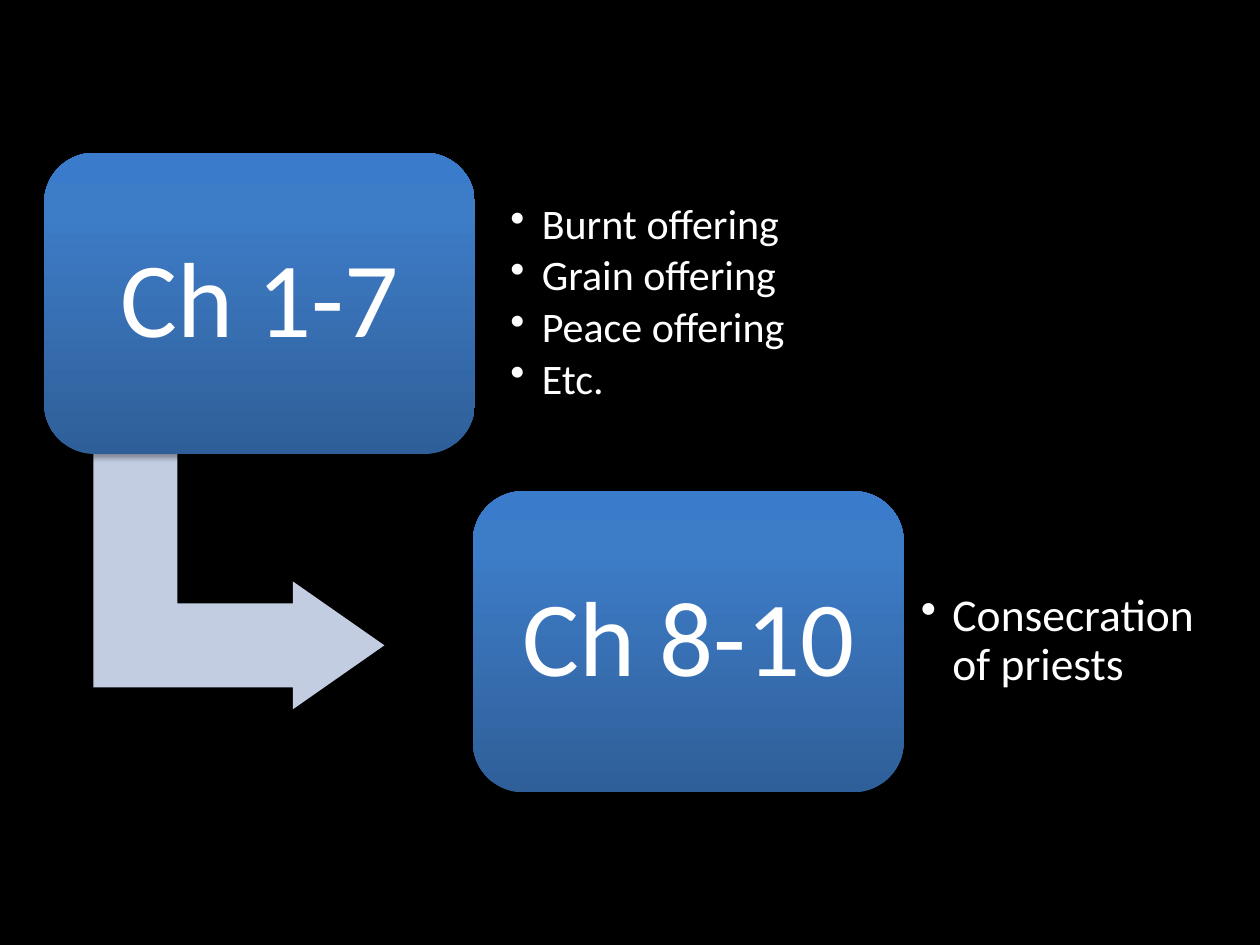
from copy import deepcopy
from lxml import etree
from pptx import Presentation
from pptx.dml.color import RGBColor
from pptx.enum.shapes import MSO_SHAPE
from pptx.enum.text import MSO_ANCHOR, PP_ALIGN
from pptx.oxml.ns import qn
from pptx.util import Pt

ROUND = MSO_SHAPE.ROUNDED_RECTANGLE
BENT = MSO_SHAPE.BENT_UP_ARROW
MIDDLE = MSO_ANCHOR.MIDDLE
CENTER, LEFT = PP_ALIGN.CENTER, PP_ALIGN.LEFT
BLACK = RGBColor(0x00, 0x00, 0x00)
WHITE = RGBColor(0xFF, 0xFF, 0xFF)
PALE = RGBColor(0xC2, 0xCD, 0xE1)
STOPS = [
    (0, RGBColor(0x2F, 0x5F, 0x99)),
    (0.8, RGBColor(0x3D, 0x7C, 0xC7)),
    (1, RGBColor(0x3A, 0x7C, 0xCB)),
]
FONT = "Calibri"

STEPS = [
    {"title": "Ch 1-7", "size": 24, "left": 282.2, "width": 350, "inset": 9.4,
     "items": ["Burnt offering", "Grain offering", "Peace offering", "Etc."]},
    {"title": "Ch 8-10", "size": 26, "left": 516.2, "width": 179.3, "inset": 10.1,
     "items": ["Consecration of priests"]},
]
BOX_W, BOX_H = 246.2, 172.1
LEFT_0, TOP_0 = 25.2, 87.3
STEP_X, STEP_Y = 245, 193.4
LIST_H = 139
LIST_DY = 16.4
ARROW = (63.4, 249.1, 146.2, 166.3)
BENDS = (0.328, 0.25, 0.358)


def shade(shape):
    shape.shadow.inherit = False
    effects = shape._element.spPr.find(qn("a:effectLst"))
    outer = etree.SubElement(effects, qn("a:outerShdw"), blurRad=str(Pt(3.1)),
                             dist=str(Pt(1.8)), dir="5400000", rotWithShape="0")
    color = etree.SubElement(outer, qn("a:srgbClr"), val=str(BLACK))
    etree.SubElement(color, qn("a:alpha"), val="35000")


def blend(shape):
    shape.fill.gradient()
    shape.fill.gradient_angle = 90
    stops = shape._element.spPr.find(qn("a:gradFill")).find(qn("a:gsLst"))
    stops.append(deepcopy(stops[-1]))
    for stop, (pos, color) in zip(shape.fill.gradient_stops, STOPS):
        stop.position = pos
        stop.color.rgb = color


def write(shape, lines, size, inset, align, after):
    frame = shape.text_frame
    frame.word_wrap = True
    frame.vertical_anchor = MIDDLE
    frame.margin_left = frame.margin_right = Pt(inset)
    frame.margin_top = frame.margin_bottom = Pt(inset)
    frame.text = "\n".join(lines)
    for para in frame.paragraphs:
        para.alignment = align
        para.line_spacing = 0.9
        para.space_after = Pt(size * after)
        for run in para.runs:
            run.font.name = FONT
            run.font.size = Pt(size)
            run.font.color.rgb = WHITE
    return frame.paragraphs


def bullet(para):
    props = para._p.get_or_add_pPr()
    props.set("marL", str(Pt(18)))
    props.set("indent", str(Pt(-18)))
    etree.SubElement(props, qn("a:buChar"), char="•")


def main():
    deck = Presentation()
    deck.slide_width, deck.slide_height = Pt(720), Pt(540)
    slide = deck.slides.add_slide(deck.slide_layouts[6])
    slide.background.fill.solid()
    slide.background.fill.fore_color.rgb = BLACK

    arrow = slide.shapes.add_shape(BENT, *map(Pt, ARROW))
    arrow.rotation = 90
    for i, bend in enumerate(BENDS):
        arrow.adjustments[i] = bend
    arrow.fill.solid()
    arrow.fill.fore_color.rgb = PALE
    arrow.line.fill.background()
    shade(arrow)

    for i, step in enumerate(STEPS):
        top = TOP_0 + i * STEP_Y
        box = slide.shapes.add_shape(ROUND, Pt(LEFT_0 + i * STEP_X), Pt(top),
                                     Pt(BOX_W), Pt(BOX_H))
        blend(box)
        box.line.fill.background()
        shade(box)
        write(box, [step["title"]], 61, 18, CENTER, 0.35)

        notes = slide.shapes.add_textbox(Pt(step["left"]), Pt(top + LIST_DY),
                                         Pt(step["width"]), Pt(LIST_H))
        for para in write(notes, step["items"], step["size"], step["inset"],
                          LEFT, 0.15):
            bullet(para)

    deck.save("out.pptx")


if __name__ == "__main__":
    main()
